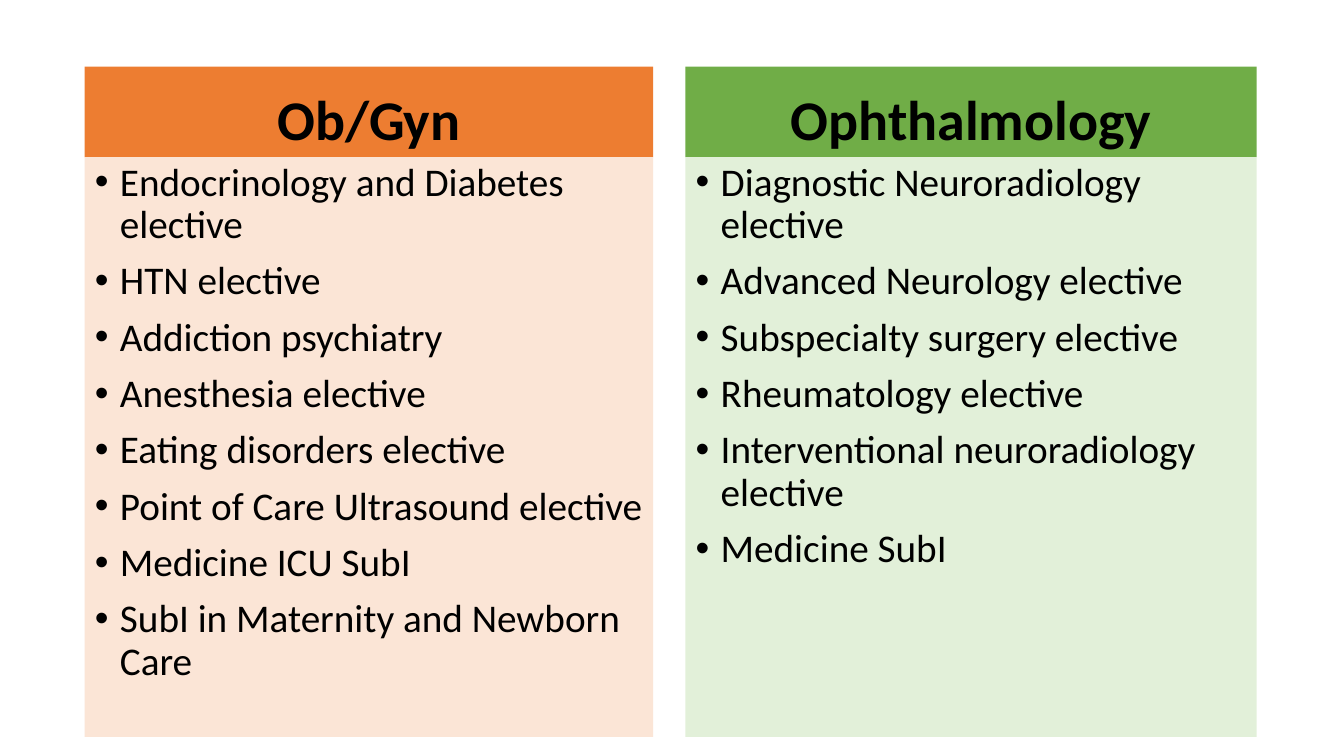
from dataclasses import dataclass

from lxml.etree import SubElement
from pptx import Presentation
from pptx.dml.color import RGBColor
from pptx.enum.text import MSO_ANCHOR, MSO_AUTO_SIZE, PP_ALIGN
from pptx.oxml.ns import qn
from pptx.shapes.placeholder import SlidePlaceholder
from pptx.util import Inches, Length, Pt

ORANGE = RGBColor(0xED, 0x7D, 0x31)
PALE_ORANGE = RGBColor(0xFB, 0xE5, 0xD6)
GREEN = RGBColor(0x70, 0xAD, 0x47)
PALE_GREEN = RGBColor(0xE2, 0xF0, 0xD9)
BLACK = RGBColor(0, 0, 0)

FONT = "Calibri"
SLIDE_WIDTH = Inches(13.33)
SLIDE_HEIGHT = Inches(7.5)
BULLET_INDENT = Inches(0.25)
COMPARISON_LAYOUT = 4

# Rows, in percent of the slide's height
HEADER_TOP = 8.8
HEADER_HEIGHT = 12
LIST_HEIGHT = 76.67


@dataclass(frozen=True)
class Specialty:
    """One column; left and width are percent of the slide's width."""
    name: str
    electives: list[str]
    left: float
    width: float
    header_fill: RGBColor
    list_fill: RGBColor
    header_index: int
    list_index: int


SPECIALTIES = [
    Specialty(
        "Ob/Gyn",
        [
            "Endocrinology and Diabetes elective",
            "HTN elective",
            "Addiction psychiatry",
            "Anesthesia elective",
            "Eating disorders elective",
            "Point of Care Ultrasound elective",
            "Medicine ICU SubI",
            "SubI in Maternity and Newborn Care",
        ],
        6.3, 42.3, ORANGE, PALE_ORANGE, 1, 2,
    ),
    Specialty(
        "Ophthalmology",
        [
            "Diagnostic Neuroradiology elective",
            "Advanced Neurology elective",
            "Subspecialty surgery elective",
            "Rheumatology elective",
            "Interventional neuroradiology elective",
            "Medicine SubI",
        ],
        51, 42.5, GREEN, PALE_GREEN, 3, 4,
    ),
]


def across(percent: float) -> Length:
    return Length(round(SLIDE_WIDTH * percent / 100))


def down(percent: float) -> Length:
    return Length(round(SLIDE_HEIGHT * percent / 100))


def place(box: SlidePlaceholder, column: Specialty, top: float,
          height: float, fill: RGBColor) -> None:
    box.left, box.width = across(column.left), across(column.width)
    box.top, box.height = down(top), down(height)
    box.fill.solid()
    box.fill.fore_color.rgb = fill


def write(box: SlidePlaceholder, lines: list[str], *, size: int,
          bold: bool = False, bulleted: bool = False,
          align: PP_ALIGN = PP_ALIGN.LEFT,
          anchor: MSO_ANCHOR = MSO_ANCHOR.TOP) -> None:
    frame = box.text_frame
    frame.word_wrap = True
    frame.auto_size = MSO_AUTO_SIZE.NONE
    frame.vertical_anchor = anchor
    frame.text = "\n".join(lines)
    for para in frame.paragraphs:
        para.alignment = align
        para.line_spacing = 0.9
        para.space_before = Pt(10)
        para.space_after = Pt(0)
        for span in para.runs:
            span.font.name = FONT
            span.font.size = Pt(size)
            span.font.bold = bold
            span.font.color.rgb = BLACK
        if bulleted:
            properties = para._p.get_or_add_pPr()
            properties.set("marL", str(BULLET_INDENT))
            properties.set("indent", str(-BULLET_INDENT))
            SubElement(properties, qn("a:buFont")).set("typeface", "Arial")
            SubElement(properties, qn("a:buChar")).set("char", "•")


def main() -> None:
    deck = Presentation()
    deck.slide_width, deck.slide_height = SLIDE_WIDTH, SLIDE_HEIGHT
    page = deck.slides.add_slide(deck.slide_layouts[COMPARISON_LAYOUT])
    title = page.shapes.title.element
    title.getparent().remove(title)

    for column in SPECIALTIES:
        header = page.placeholders[column.header_index]
        place(header, column, HEADER_TOP, HEADER_HEIGHT, column.header_fill)
        write(header, [column.name], size=40, bold=True,
              align=PP_ALIGN.CENTER, anchor=MSO_ANCHOR.BOTTOM)

        electives = page.placeholders[column.list_index]
        place(electives, column, HEADER_TOP + HEADER_HEIGHT, LIST_HEIGHT,
              column.list_fill)
        write(electives, column.electives, size=28, bulleted=True)

    deck.save("out.pptx")


if __name__ == "__main__":
    main()
